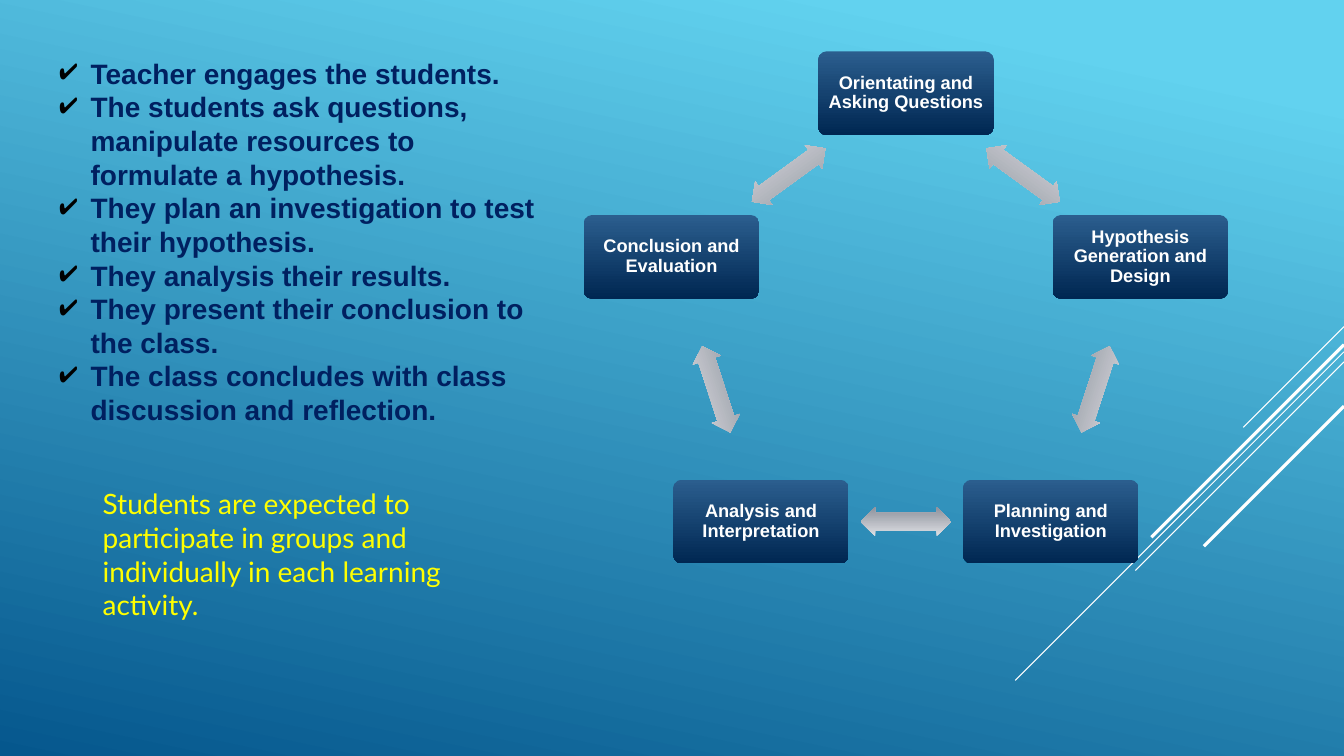
import math
from lxml import etree
from pptx import Presentation
from pptx import util as u
from pptx.dml.color import RGBColor
from pptx.enum import shapes, text
from pptx.oxml.ns import qn

W, H = 13.33, 7.5
STAGES = ["Orientating and Asking Questions", "Hypothesis Generation and Design",
          "Planning and Investigation", "Analysis and Interpretation",
          "Conclusion and Evaluation"]
STEPS = ["Teacher engages the students.",
         "The students ask questions, manipulate resources to formulate a hypothesis.",
         "They plan an investigation to test their hypothesis.",
         "They analysis their results.",
         "They present their conclusion to the class.",
         "The class concludes with class discussion and reflection."]
EXPECTATION = ("Students are expected to participate in groups and "
               "individually in each learning activity.")
STREAKS = [(3.24, 1, 0.75), (3.49, 3.26, 0.75), (3.59, 2.07, 0.75),
           (3.42, 1.91, 2.25), (4.03, 1.39, 2.25)]


def color(value):
    return RGBColor.from_string(value)


def inches(*values):
    return [u.Inches(v) for v in values]


def gradient(fill, start, end, angle, first=0):
    fill.gradient()
    fill.gradient_angle = 360 - angle
    for stop, value, position in zip(fill.gradient_stops, (start, end), (first, 1)):
        stop.color.rgb = color(value)
        stop.position = position


def write(p, words, size, font, fill, bold=False, align=None, spacing=None):
    p.alignment = align
    p.line_spacing = spacing
    r = p.add_run()
    r.text = words
    r.font.size = u.Pt(size)
    r.font.name = font
    r.font.bold = bold
    r.font.color.rgb = color(fill)


def check_bullet(p, indent):
    pPr = p._p.get_or_add_pPr()
    pPr.set("marL", str(u.Inches(indent)))
    pPr.set("indent", str(-u.Inches(indent)))
    tint = etree.SubElement(pPr, qn("a:buClr"))
    etree.SubElement(tint, qn("a:srgbClr"), val="000000")
    etree.SubElement(pPr, qn("a:buChar"), char="✔")


def add_text_frame(s, box):
    tf = s.shapes.add_textbox(*inches(*box)).text_frame
    tf.word_wrap = True
    return tf


def add_block(s, kind, center, size, adjustments, start, end):
    (cx, cy), (w, h) = center, size
    sp = s.shapes.add_shape(kind, *inches(cx - w / 2, cy - h / 2, w, h))
    sp.shadow.inherit = False
    sp.line.fill.background()
    for i, value in enumerate(adjustments):
        sp.adjustments[i] = value
    gradient(sp.fill, start, end, 90)
    return sp


def add_streaks(s, right):
    for y, reach, width in STREAKS:
        line = s.shapes.add_connector(shapes.MSO_CONNECTOR.STRAIGHT,
                                      *inches(right, y, right - reach, y + reach))
        line.line.color.rgb = color("FFFFFF")
        line.line.width = u.Pt(width)
        etree.SubElement(line._element.spPr, qn("a:effectLst"))


def add_cycle(s, box):
    x, y, w, h = box
    node_w, node_h = 1.74, 0.83
    turn = 360 / len(STAGES)
    rx = (w - node_w) / 2 / math.sin(math.radians(turn))
    ry = (h - node_h) / (1 + math.cos(math.radians(turn / 2)))
    cx, cy = x + w / 2, y + node_h / 2 + ry
    angles = [math.radians(turn * i) for i in range(len(STAGES))]
    centers = [(cx + rx * math.sin(a), cy - ry * math.cos(a)) for a in angles]
    for i, (stage, here) in enumerate(zip(STAGES, centers)):
        sp = add_block(s, shapes.MSO_SHAPE.ROUNDED_RECTANGLE, here, (node_w, node_h),
                       [0.1], "2B5E8E", "002752")
        tf = sp.text_frame
        tf.word_wrap = True
        tf.vertical_anchor = text.MSO_ANCHOR.MIDDLE
        tf.margin_left = tf.margin_right = u.Inches(0.07)
        write(tf.paragraphs[0], stage, 13, "Arial", "FFFFFF", bold=True,
              align=text.PP_ALIGN.CENTER, spacing=0.9)
        after = centers[(i + 1) % len(centers)]
        middle = [(a + b) / 2 for a, b in zip(here, after)]
        arrow = add_block(s, shapes.MSO_SHAPE.LEFT_RIGHT_ARROW, middle, (0.9, 0.29),
                          [0.6, 0.5], "DEE0E4", "8D919C")
        arrow.rotation = turn * (i + 0.5)


def add_steps(s, box):
    tf = add_text_frame(s, box)
    for i, step in enumerate(STEPS):
        p = tf.add_paragraph() if i else tf.paragraphs[0]
        write(p, step, 20, "Arial", "002060", bold=True, spacing=u.Pt(24))
        check_bullet(p, 0.31)


def add_expectation(s, box):
    tf = add_text_frame(s, box)
    write(tf.paragraphs[0], EXPECTATION, 20, "Lato", "FFFF00")


def main():
    prs = Presentation()
    prs.slide_width, prs.slide_height = inches(W, H)
    s = prs.slides.add_slide(prs.slide_layouts[6])
    gradient(s.background.fill, "62D2EF", "05578D", 102, first=0.1)
    add_streaks(s, W)
    add_cycle(s, (5.79, 0.51, 6.39, 5.08))
    add_steps(s, (0.49, 0.51, 4.95, 4.21))
    add_expectation(s, (0.92, 4.78, 4.2, 1.92))
    prs.save("out.pptx")


if __name__ == "__main__":
    main()
